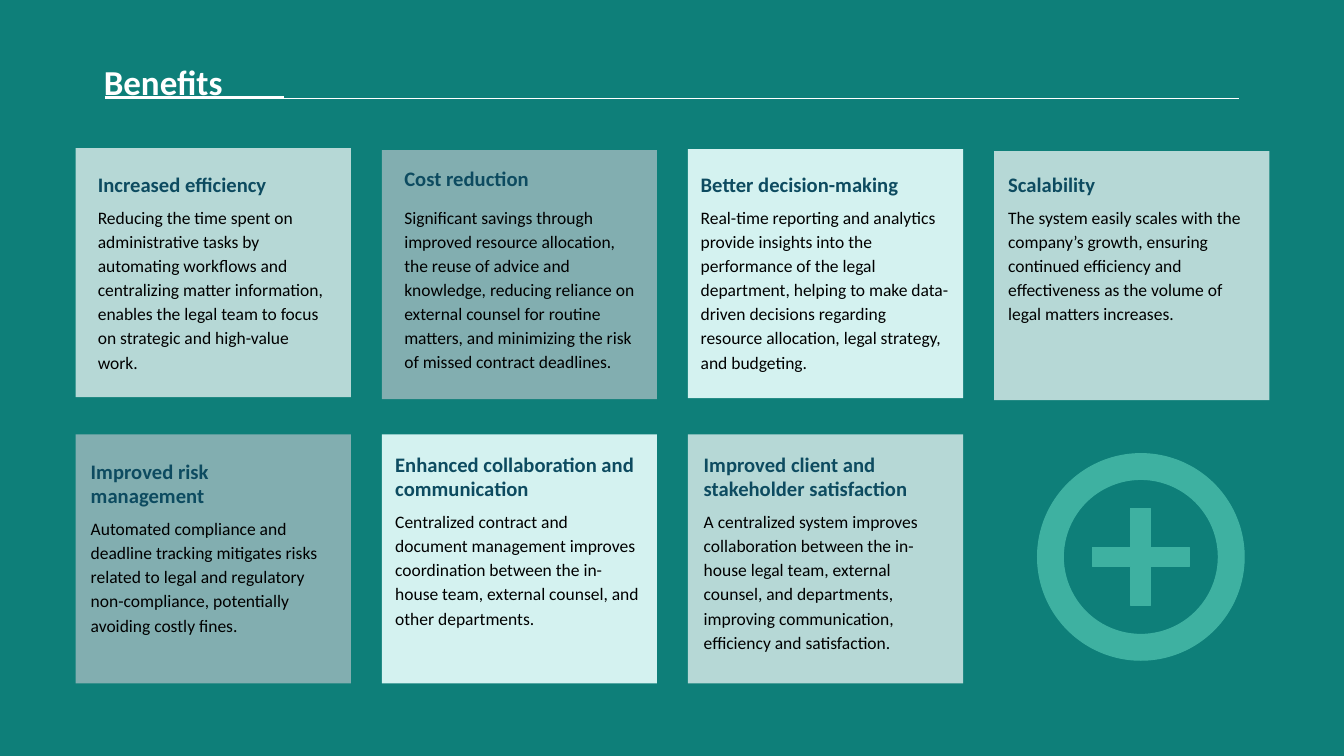
from dataclasses import dataclass

from lxml import etree
from pptx import Presentation
from pptx.dml.color import RGBColor
from pptx.enum.shapes import MSO_CONNECTOR, MSO_SHAPE
from pptx.enum.text import MSO_ANCHOR, MSO_AUTO_SIZE, PP_ALIGN
from pptx.oxml.ns import qn
from pptx.util import Inches, Pt


@dataclass(frozen=True)
class Theme:
    font: str = "Calibri"
    background: str = "0E7F79"
    white: str = "FFFFFF"
    heading: str = "0D4B60"
    body: str = "000000"
    accent: str = "3EB1A1"
    mist: str = "B6D8D6"
    slate: str = "82AEB0"
    ice: str = "D4F2F0"
    title_size: float = 25
    heading_size: float = 14.7
    body_size: float = 12.5


@dataclass(frozen=True)
class Benefit:
    column: int
    top: float
    color: str
    text_area: tuple  # left, top, width, height
    heading: str
    body: str
    heading_spacing: float = 1.0
    before: float = 5
    after: float = 1.5


THEME = Theme()
CARD_LEFT, CARD_PITCH = 0.75, 3.037
CARD_WIDTH, CARD_HEIGHT = 2.73, 2.47
LOWER_ROW = 4.31

BENEFITS = [
    Benefit(0, 1.47, THEME.mist, (0.92, 1.62, 2.39, 2.49), "Increased efficiency",
            "Reducing the time spent on administrative tasks by automating workflows and "
            "centralizing matter information, enables the legal team to focus on strategic "
            "and high-value work.", heading_spacing=1.15, after=0),
    Benefit(1, 1.49, THEME.slate, (3.96, 1.6, 2.39, 2.29), "Cost reduction",
            "Significant savings through improved resource allocation, the reuse of advice "
            "and knowledge, reducing reliance on external counsel for routine matters, and "
            "minimizing the risk of missed contract deadlines.", before=9, after=9),
    Benefit(2, 1.48, THEME.ice, (6.9, 1.62, 2.56, 2.18), "Better decision-making",
            "Real-time reporting and analytics provide insights into the performance of the "
            "legal department, helping to make data-driven decisions regarding resource "
            "allocation, legal strategy, and budgeting.", heading_spacing=1.15),
    Benefit(3, 1.5, THEME.mist, (9.95, 1.62, 2.56, 1.69), "Scalability",
            "The system easily scales with the company’s growth, ensuring continued "
            "efficiency and effectiveness as the volume of legal matters increases.",
            heading_spacing=1.15),
    Benefit(0, LOWER_ROW, THEME.slate, (0.85, 4.5, 2.39, 1.9), "Improved risk management",
            "Automated compliance and deadline tracking mitigates risks related to legal "
            "and regulatory non-compliance, potentially avoiding costly fines."),
    Benefit(1, LOWER_ROW, THEME.ice, (3.87, 4.43, 2.56, 1.9),
            "Enhanced collaboration and communication",
            "Centralized contract and document management improves coordination between "
            "the in-house team, external counsel, and other departments."),
    Benefit(2, LOWER_ROW, THEME.mist, (6.93, 4.43, 2.5, 2.15),
            "Improved client and stakeholder satisfaction",
            "A centralized system improves collaboration between the in-house legal team, "
            "external counsel, and departments, improving communication, efficiency and "
            "satisfaction."),
]


def color(value):
    return RGBColor.from_string(value)


def add_rule(page, left, right, top, weight):
    rule = page.shapes.add_connector(
        MSO_CONNECTOR.STRAIGHT, Inches(left), Inches(top), Inches(right), Inches(top))
    rule.line.color.rgb = color(THEME.white)
    rule.line.width = Pt(weight)
    etree.SubElement(rule._element.spPr, qn("a:effectLst"))


def add_filled(page, kind, area, fill, outlined=False):
    shape = page.shapes.add_shape(kind, *map(Inches, area))
    shape.shadow.inherit = False
    shape.fill.solid()
    shape.fill.fore_color.rgb = color(fill)
    if outlined:
        shape.line.color.rgb = color(fill)
        shape.line.width = Pt(0.75)
    else:
        shape.line.fill.background()
    return shape


def add_text_frame(page, area, side_inset, end_inset):
    frame = page.shapes.add_textbox(*map(Inches, area)).text_frame
    frame.word_wrap = True
    frame.vertical_anchor = MSO_ANCHOR.TOP
    frame.margin_left = frame.margin_right = Inches(side_inset)
    frame.margin_top = frame.margin_bottom = Inches(end_inset)
    return frame


def write(para, text, size, ink, bold=False, spacing=1.0, before=0, after=0):
    para.text = text
    para.alignment = PP_ALIGN.LEFT
    para.line_spacing = spacing
    para.space_before = Pt(before)
    para.space_after = Pt(after)
    para.font.name = THEME.font
    para.font.size = Pt(size)
    para.font.bold = bold
    para.font.color.rgb = color(ink)


def add_card(page, benefit):
    left = CARD_LEFT + benefit.column * CARD_PITCH
    add_filled(page, MSO_SHAPE.RECTANGLE,
               (left, benefit.top, CARD_WIDTH, CARD_HEIGHT), benefit.color)
    frame = add_text_frame(page, benefit.text_area, 0.05, 0.05)
    frame.auto_size = MSO_AUTO_SIZE.SHAPE_TO_FIT_TEXT
    write(frame.paragraphs[0], benefit.heading, THEME.heading_size, THEME.heading,
          bold=True, spacing=benefit.heading_spacing)
    write(frame.add_paragraph(), benefit.body, THEME.body_size, THEME.body,
          spacing=1.15, before=benefit.before, after=benefit.after)


def add_plus_badge(page):
    plus = add_filled(page, MSO_SHAPE.MATH_PLUS, (10.66, 4.87, 1.31, 1.31),
                      THEME.accent, outlined=True)
    plus.adjustments[0] = 0.149
    ring = add_filled(page, MSO_SHAPE.DONUT, (10.29, 4.5, 2.05, 2.05),
                      THEME.accent, outlined=True)
    ring.adjustments[0] = 0.125


def main():
    deck = Presentation()
    deck.slide_width, deck.slide_height = Inches(13.33), Inches(7.5)
    page = deck.slides.add_slide(deck.slide_layouts[6])
    page.background.fill.solid()
    page.background.fill.fore_color.rgb = color(THEME.background)

    # Title with its thin and thick rules
    add_rule(page, 1.15, 12.29, 0.98, 0.82)
    add_rule(page, 1.04, 2.82, 0.97, 2.47)
    title = add_text_frame(page, (0.97, 0.51, 6.31, 0.43), 0.06, 0.03)
    write(title.paragraphs[0], "Benefits", THEME.title_size, THEME.white,
          bold=True, spacing=1.15)

    # Benefit cards
    for benefit in BENEFITS:
        add_card(page, benefit)

    # Badge in the last grid cell
    add_plus_badge(page)

    deck.save("out.pptx")


if __name__ == "__main__":
    main()
